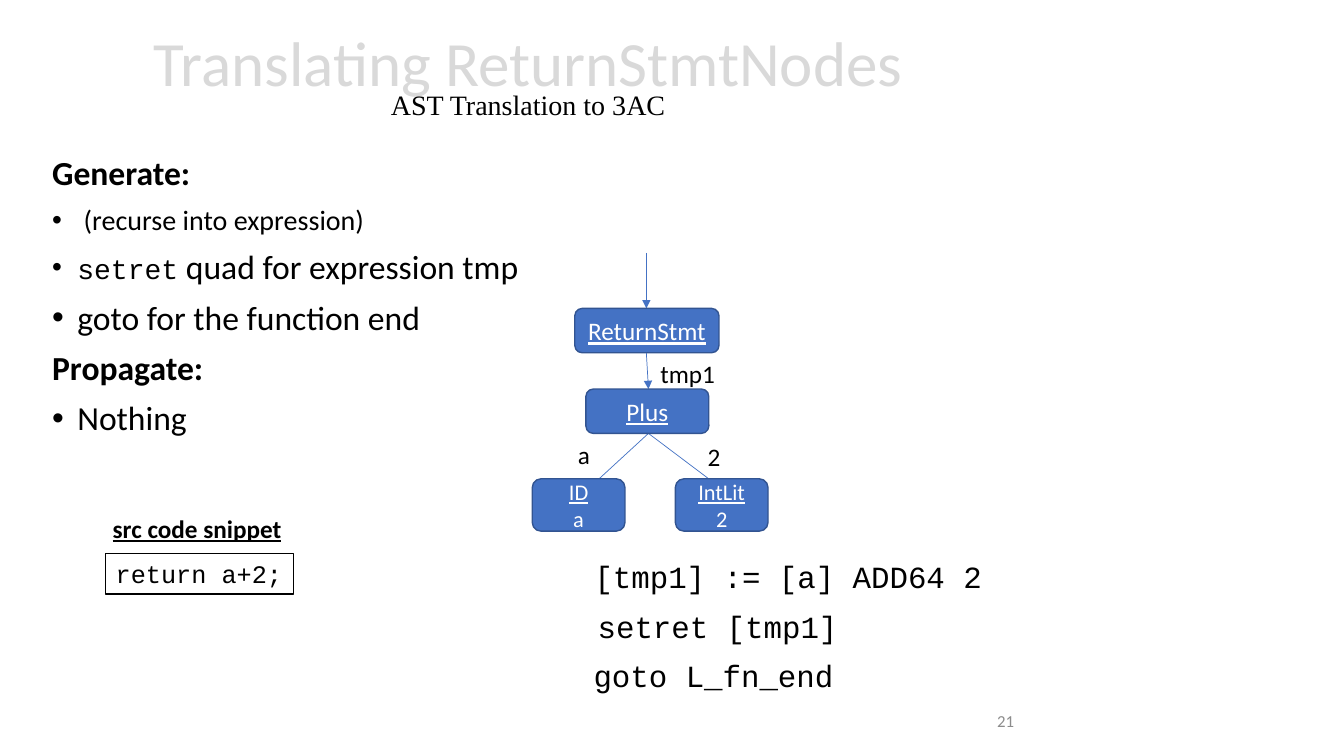
from lxml import etree
from pptx import Presentation
from pptx.dml.color import RGBColor
from pptx.enum.shapes import MSO_CONNECTOR as Connector, MSO_SHAPE as Preset
from pptx.enum.text import MSO_ANCHOR as Anchor, MSO_AUTO_SIZE as AutoSize, PP_ALIGN as Align
from pptx.oxml.ns import qn
from pptx.util import Pt

BLACK = RGBColor(0x00, 0x00, 0x00)
WHITE = RGBColor(0xFF, 0xFF, 0xFF)
BLUE = RGBColor(0x44, 0x72, 0xC4)
NAVY = RGBColor(0x32, 0x54, 0x91)
LIGHT_GREY = RGBColor(0xD9, 0xD9, 0xD9)
GREY = RGBColor(0x8C, 0x8C, 0x8C)
SANS, MONO, SERIF = "Calibri", "Courier New", "Times New Roman"


def add_run(paragraph, text, size=18, font=SANS, color=BLACK, bold=False, underline=False):
    run = paragraph.add_run()
    run.text = text
    run.font.size = Pt(size)
    run.font.name = font
    run.font.color.rgb = color
    run.font.bold = bold
    run.font.underline = underline


def add_text_box(slide, box, wrap=True, anchor=Anchor.TOP):
    shape = slide.shapes.add_textbox(*map(Pt, box))
    frame = shape.text_frame
    frame.word_wrap = wrap
    frame.auto_size = AutoSize.NONE if wrap else AutoSize.SHAPE_TO_FIT_TEXT
    frame.vertical_anchor = anchor
    return shape


def add_label(slide, box, text, **style):
    shape = add_text_box(slide, box, wrap=False)
    add_run(shape.text_frame.paragraphs[0], text, **style)
    return shape


def add_bullet(paragraph):
    properties = paragraph._p.get_or_add_pPr()
    properties.set("marL", str(Pt(18)))
    properties.set("indent", str(-Pt(18)))
    etree.SubElement(properties, qn("a:buFont")).set("typeface", "Arial")
    etree.SubElement(properties, qn("a:buChar")).set("char", "•")


def add_title(slide, box):
    paragraph = add_text_box(slide, box, anchor=Anchor.MIDDLE).text_frame.paragraphs[0]
    paragraph.alignment = Align.CENTER
    paragraph.line_spacing = 0.7
    add_run(paragraph, "Translating ReturnStmtNodes", size=45, color=LIGHT_GREY)
    paragraph.add_line_break()
    add_run(paragraph, "AST Translation to 3AC", size=20, font=SERIF)


def add_rules(slide, box):
    heading = {"size": 24, "bold": True}
    item = {"size": 24}
    rules = [
        (False, [("Generate:", heading)]),
        (True, [(" (recurse into expression)", {"size": 20})]),
        (True, [("setret", {"size": 20, "font": MONO}), (" quad for expression tmp", item)]),
        (True, [("goto for the function end", item)]),
        (False, [("Propagate:", heading)]),
        (True, [("Nothing", item)]),
    ]
    frame = add_text_box(slide, box).text_frame
    for index, (bulleted, runs) in enumerate(rules):
        paragraph = frame.add_paragraph() if index else frame.paragraphs[0]
        paragraph.line_spacing = 0.9
        paragraph.space_before = Pt(10)
        if bulleted:
            add_bullet(paragraph)
        for text, style in runs:
            add_run(paragraph, text, **style)


def add_node(slide, box, lines, size):
    shape = slide.shapes.add_shape(Preset.ROUNDED_RECTANGLE, *map(Pt, box))
    shape.shadow.inherit = False
    shape.fill.solid()
    shape.fill.fore_color.rgb = BLUE
    shape.line.color.rgb = NAVY
    shape.line.width = Pt(1)
    frame = shape.text_frame
    frame.word_wrap = True
    frame.vertical_anchor = Anchor.MIDDLE
    for index, text in enumerate(lines):
        paragraph = frame.add_paragraph() if index else frame.paragraphs[0]
        paragraph.alignment = Align.CENTER
        add_run(paragraph, text, size=size, color=WHITE, underline=index == 0)


def add_arrow(slide, start, end):
    arrow = slide.shapes.add_connector(Connector.STRAIGHT, *map(Pt, (*start, *end)))
    arrow.line.color.rgb = BLUE
    arrow.line.width = Pt(0.5)
    etree.SubElement(arrow.line._get_or_add_ln(), qn("a:tailEnd")).set("type", "triangle")
    etree.SubElement(arrow._element.spPr, qn("a:effectLst"))


def add_syntax_tree(slide, box):
    left, top, width, height = box
    leaf_width, leaf_height, node_height = 66.2, 37.4, 31.7
    statement_top, plus_top = top + 39.6, top + 97.2
    statement_x, plus_x = left + 81.5, left + 83
    plus_bottom = plus_top + node_height
    leaf_top = top + height - leaf_height
    arrows = [
        ((statement_x, top), (statement_x, statement_top)),
        ((statement_x, statement_top + node_height), (plus_x, plus_top)),
        ((plus_x, plus_bottom), (left + 28.2, leaf_top + 18)),
        ((plus_x, plus_bottom), (left + 134, leaf_top + 6)),
    ]
    for start, end in arrows:
        add_arrow(slide, start, end)
    nodes = [
        ((left + 30.4, statement_top, 103, node_height), ["ReturnStmt"], 18),
        ((left + 38.3, plus_top, 87.8, node_height), ["Plus"], 18),
        ((left, leaf_top, leaf_width, leaf_height), ["ID", "a"], 16),
        ((left + width - leaf_width, leaf_top, leaf_width, leaf_height), ["IntLit", "2"], 16),
    ]
    for node_box, lines, size in nodes:
        add_node(slide, node_box, lines, size)
    labels = [("tmp1", 84.4, 71.4, 54), ("a", 25.4, 129.6, 23), ("2", 118.2, 131, 23.8)]
    for text, x, y, label_width in labels:
        add_label(slide, (left + x, top + y, label_width, 29), text)


def add_snippet(slide, box):
    left, top, width, height = box
    add_label(slide, (left, top, width, 29), "src code snippet", bold=True, underline=True)
    code_box = (left + 2.2, top + height - 29, 133.9, 29)
    code = add_label(slide, code_box, "return a+2;", font=MONO)
    code.fill.solid()
    code.fill.fore_color.rgb = WHITE
    code.line.color.rgb = BLACK
    code.line.width = Pt(1)


def add_quads(slide, box):
    left, top, width, height = box
    quads = [
        ("[tmp1] := [a] ADD64 2", 0.7, width),
        ("setret [tmp1]", 2.9, 188.6),
        ("goto L_fn_end", 0, 188.6),
    ]
    line_height = 33.8
    step = (height - line_height) / (len(quads) - 1)
    for index, (text, shift, line_width) in enumerate(quads):
        line_box = (left + shift, top + index * step, line_width, line_height)
        add_label(slide, line_box, text, size=22, font=MONO)


def add_page_number(slide, box):
    paragraph = add_text_box(slide, box, anchor=Anchor.MIDDLE).text_frame.paragraphs[0]
    paragraph.alignment = Align.RIGHT
    add_run(paragraph, "21", size=12, color=GREY)


def main():
    presentation = Presentation()
    presentation.slide_width = Pt(960)
    presentation.slide_height = Pt(540)
    slide = presentation.slides.add_slide(presentation.slide_layouts[6])
    add_title(slide, (17.3, 6.5, 720, 104.4))
    add_rules(slide, (30.2, 108, 362.2, 210.2))
    add_syntax_tree(slide, (380.2, 180.7, 168.4, 198.7))
    add_snippet(slide, (73.4, 362.9, 136.1, 61.4))
    add_quads(slide, (416.9, 394.6, 295.2, 105.1))
    add_page_number(slide, (515.5, 500.4, 216, 28.8))
    presentation.save("out.pptx")


if __name__ == "__main__":
    main()
